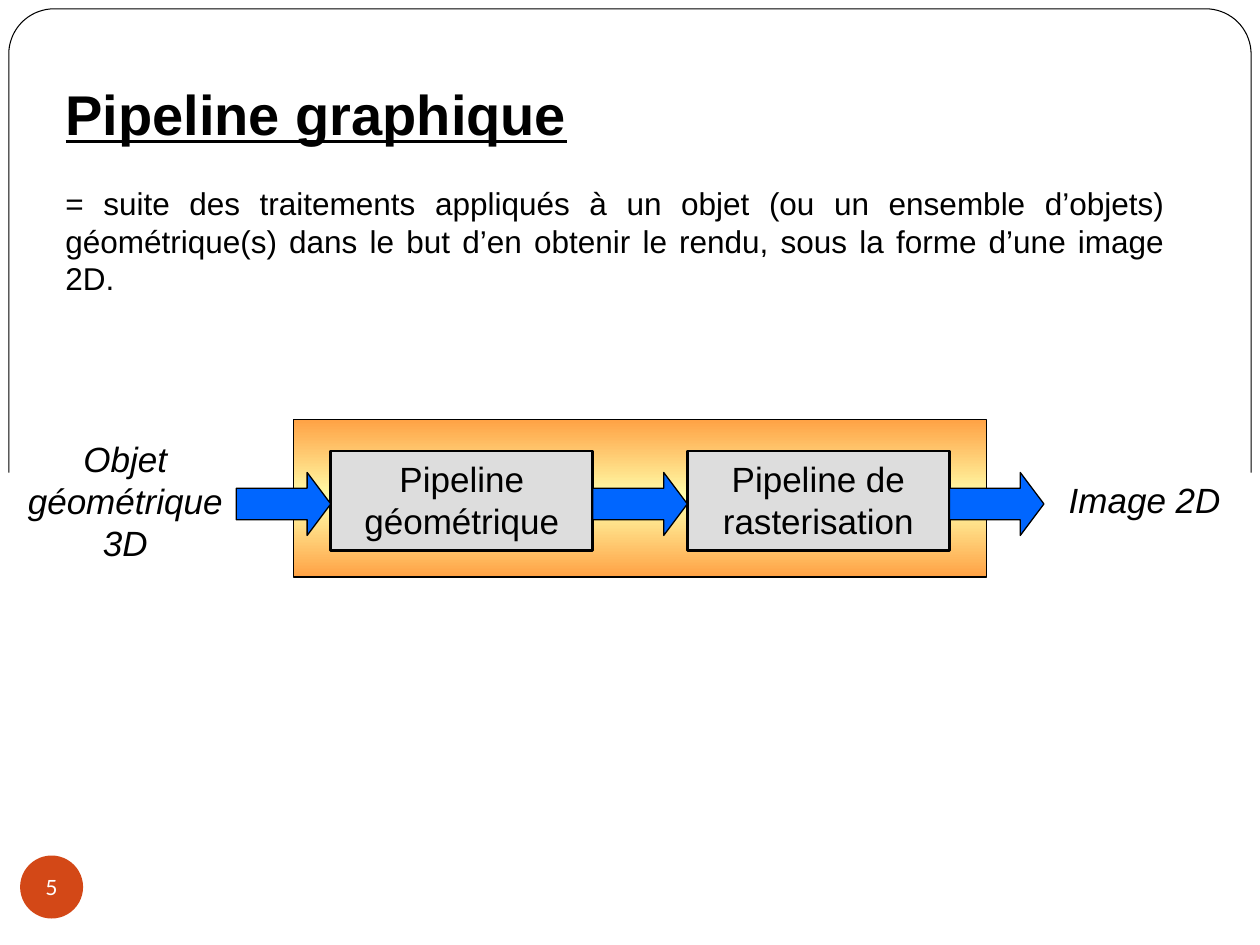
from copy import deepcopy
from math import cos, radians, sin

from pptx import Presentation
from pptx.dml.color import RGBColor
from pptx.enum.shapes import MSO_SHAPE
from pptx.enum.text import MSO_ANCHOR, PP_ALIGN
from pptx.util import Inches, Pt

RECTANGLE = MSO_SHAPE.RECTANGLE
RIGHT_ARROW = MSO_SHAPE.RIGHT_ARROW
OVAL = MSO_SHAPE.OVAL
TOP, MIDDLE = MSO_ANCHOR.TOP, MSO_ANCHOR.MIDDLE
CENTER, JUSTIFY, LEFT = PP_ALIGN.CENTER, PP_ALIGN.JUSTIFY, PP_ALIGN.LEFT

BLACK, WHITE = "000000", "FFFFFF"
ORANGE, YELLOW = "FFA245", "FFFFAB"
GREY, BLUE, RUST = "DDDDDD", "0066FF", "D34817"


def color(hex_text):
    return RGBColor.from_string(hex_text)


def write(shape, text, size, align=CENTER, anchor=TOP, font="Arial",
          ink=BLACK, bold=False, italic=False, underline=False):
    frame = shape.text_frame
    frame.word_wrap = True
    frame.vertical_anchor = anchor
    para = frame.paragraphs[0]
    para.alignment = align
    span = para.add_run()
    span.text = text
    span.font.name = font
    span.font.size = Pt(size)
    span.font.color.rgb = color(ink)
    span.font.bold = bold
    span.font.italic = italic
    span.font.underline = underline


def add_text(page, box, text, size, **style):
    label = page.shapes.add_textbox(*map(Inches, box))
    write(label, text, size, **style)


def add_block(page, kind, box, fill, line_width=None):
    block = page.shapes.add_shape(kind, *map(Inches, box))
    block.shadow.inherit = False
    block.fill.solid()
    block.fill.fore_color.rgb = color(fill)
    if line_width is None:
        block.line.fill.background()
    else:
        block.line.color.rgb = color(BLACK)
        block.line.width = Pt(line_width)
    return block


def add_frame(page, box, radius):
    """Outline with two rounded top corners, open at the bottom."""
    left, top, width, height = box
    right, bottom = left + width, top + height
    points = []
    for center_x, first in ((left + radius, 180), (right - radius, 270)):
        for angle in range(first, first + 91, 5):
            points.append((Inches(center_x + radius * cos(radians(angle))),
                           Inches(top + radius + radius * sin(radians(angle)))))
    points.append((Inches(right), Inches(bottom)))
    builder = page.shapes.build_freeform(Inches(left), Inches(bottom))
    builder.add_line_segments(points, close=False)
    outline = builder.convert_to_shape()
    outline.shadow.inherit = False
    outline.fill.background()
    outline.line.color.rgb = color(BLACK)
    outline.line.width = Pt(0.6)


def add_heading(page, box):
    left, top, width, height = box
    title = page.shapes.title
    title.left, title.top = Inches(left), Inches(top)
    title.width, title.height = Inches(width), Inches(0.63)
    write(title, "Pipeline graphique", 32, align=LEFT, bold=True, underline=True)
    # Definition below the title
    offset = 0.83
    add_text(page, (left, top + offset, width, height - offset),
             "= suite des traitements appliqués à un objet (ou un ensemble "
             "d’objets) géométrique(s) dans le but d’en obtenir le rendu, "
             "sous la forme d’une image 2D.", 18, align=JUSTIFY)


def add_pipeline(page, box):
    left, top, width, height = box
    # Gradient background
    panel = add_block(page, RECTANGLE, box, ORANGE, 0.75)
    panel.fill.gradient()
    panel.fill.gradient_angle = 90
    stops = panel.fill.gradient_stops
    stops[0]._gs.addnext(deepcopy(stops[0]._gs))
    for stop, position, tint in zip(panel.fill.gradient_stops, (0, 0.5, 1),
                                    (ORANGE, YELLOW, ORANGE)):
        stop.position = position
        stop.color.rgb = color(tint)

    # Stages, with an arrow before, between and after them
    stage_width, arrow_width = 2.08, 0.75
    step = stage_width + arrow_width
    stage_left = left + (width - stage_width - step) / 2
    for index, name in enumerate(("Pipeline géométrique",
                                  "Pipeline de rasterisation")):
        stage = add_block(page, RECTANGLE,
                          (stage_left + index * step, top + 0.25, stage_width, 0.79),
                          GREY, 1.5)
        write(stage, name, 20)
    for index in range(3):
        arrow = add_block(page, RIGHT_ARROW,
                          (stage_left - arrow_width + index * step, top + 0.42,
                           arrow_width, 0.5), BLUE, 0.75)
        arrow.adjustments[0] = 0.5
        arrow.adjustments[1] = 0.375

    # Input and output
    add_text(page, (left - 2.25, top + 0.09, 1.83, 1.1),
             "Objet géométrique 3D", 20, italic=True)
    add_text(page, (left + width + 0.42, top + 0.42, 1.67, 0.43),
             "Image 2D", 20, italic=True)


def add_page_number(page, box):
    badge = add_block(page, OVAL, box, RUST)
    frame = badge.text_frame
    frame.margin_left = frame.margin_right = 0
    frame.margin_top = frame.margin_bottom = 0
    write(badge, "5", 12, anchor=MIDDLE, font="Lato", ink=WHITE)


def main():
    deck = Presentation()
    deck.slide_width, deck.slide_height = Inches(10), Inches(7.5)
    page = deck.slides.add_slide(deck.slide_layouts[5])
    page.background.fill.solid()
    page.background.fill.fore_color.rgb = color(WHITE)
    add_frame(page, (0.07, 0.07, 9.86, 3.68), 0.36)
    add_heading(page, (0.42, 0.58, 8.92, 1.85))
    add_pipeline(page, (2.33, 3.33, 5.5, 1.25))
    add_page_number(page, (0.16, 6.79, 0.5, 0.5))
    deck.save("out.pptx")


if __name__ == "__main__":
    main()
